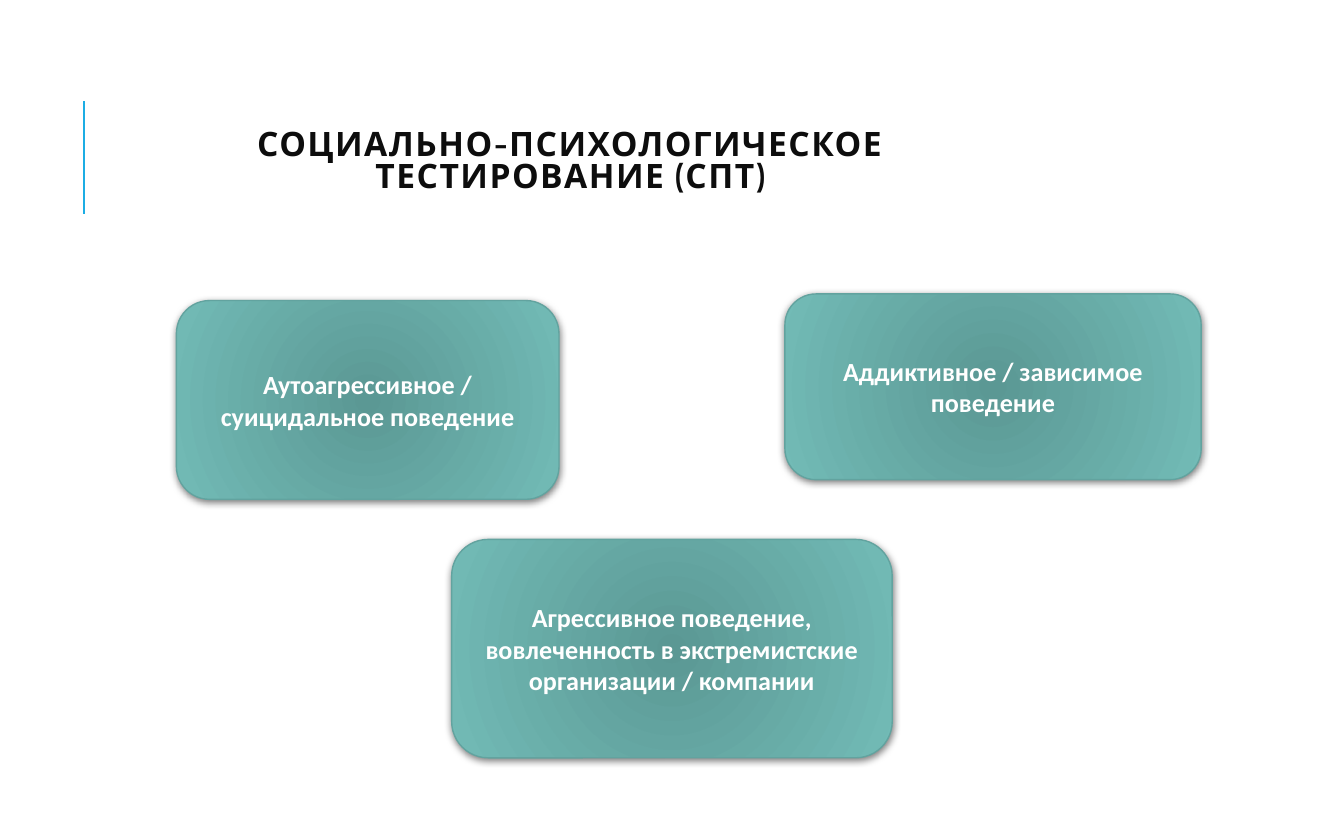
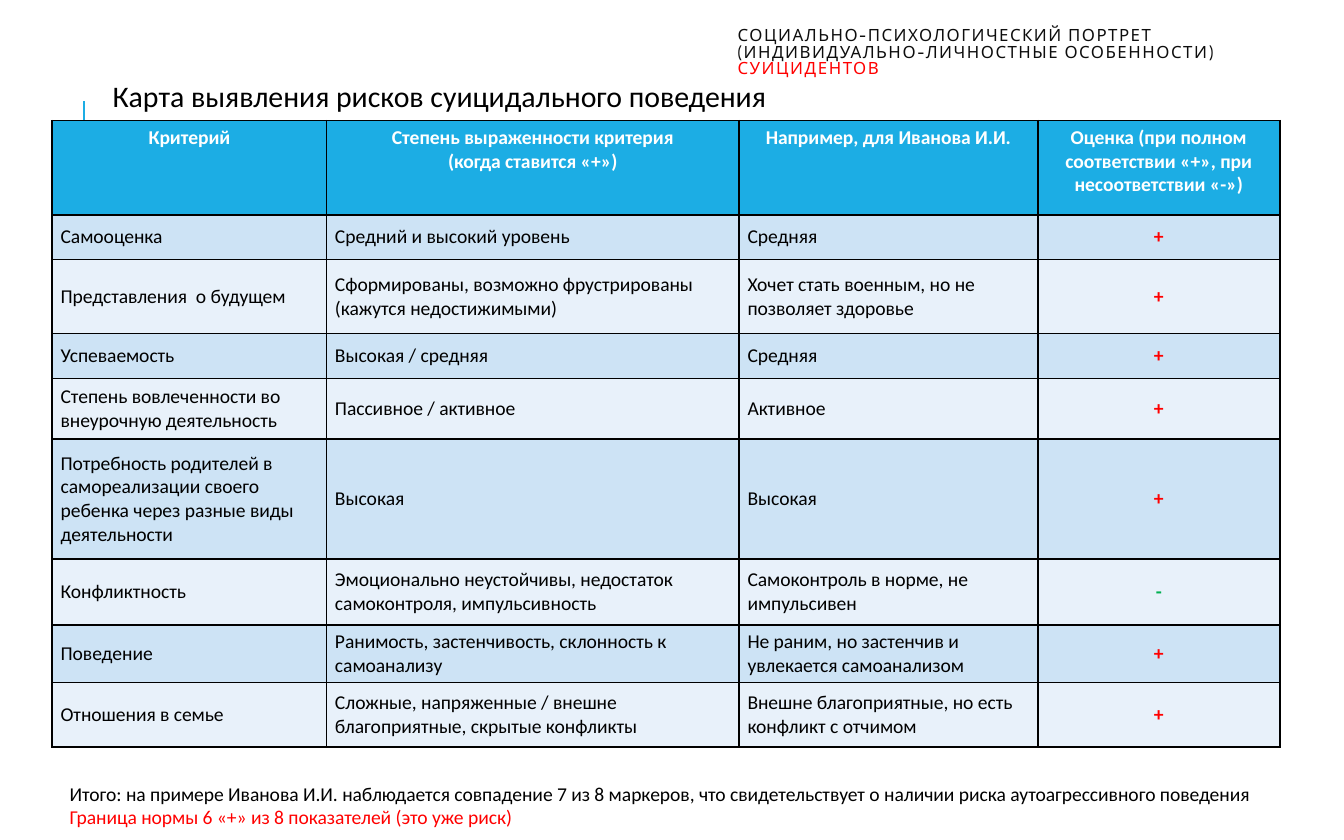
"""Build two slides on social and psychological testing and a risk chart."""
from dataclasses import dataclass

from lxml.etree import SubElement
from pptx import Presentation
from pptx.dml.color import RGBColor
from pptx.enum.shapes import MSO_CONNECTOR, MSO_SHAPE
from pptx.enum.text import MSO_ANCHOR, MSO_AUTO_SIZE, PP_ALIGN
from pptx.oxml.ns import qn
from pptx.util import Pt


@dataclass(frozen=True)
class Theme:
    heading_font: str = "Cabin"
    body_font: str = "Calibri"
    accent: str = "1CADE4"
    heading: str = "0D0D0D"
    text: str = "000000"
    light: str = "FFFFFF"
    alert: str = "FF0000"
    calm: str = "00B050"
    card_centre: str = "5B9894"
    card_edge: str = "72BBB6"
    card_line: str = "62A39F"
    bands: tuple = ("CDE3F5", "E8F1FA")
    title_size: float = 18
    small_title_size: float = 9
    caption_size: float = 16
    card_size: float = 14
    table_size: float = 10.5


class SlideBuilder:
    def __init__(self, presentation, theme):
        self.presentation = presentation
        self.theme = theme
        self.slide = None

    def new_slide(self):
        self.slide = self.presentation.slides.add_slide(self.presentation.slide_layouts[5])
        rule = self.slide.shapes.add_connector(
            MSO_CONNECTOR.STRAIGHT, Pt(45), Pt(114.5), Pt(45), Pt(54))
        rule.line.color.rgb = RGBColor.from_string(self.theme.accent)
        rule.line.width = Pt(1.5)
        SubElement(rule._element.spPr, qn("a:effectLst"))

    def add_text(self, paragraph, text, size, color, bold=False, font=None):
        run = paragraph.add_run()
        run.text = text
        run.font.name = font or self.theme.body_font
        run.font.size = Pt(size)
        run.font.bold = bold
        run.font.color.rgb = RGBColor.from_string(color)
        return run

    def title(self, box, runs, size, alignment=PP_ALIGN.LEFT, bold=False):
        shape = self.slide.shapes.title
        shape.left, shape.top, shape.width, shape.height = map(Pt, box)
        frame = shape.text_frame
        frame.auto_size = MSO_AUTO_SIZE.NONE
        frame.vertical_anchor = MSO_ANCHOR.MIDDLE
        paragraph = frame.paragraphs[0]
        paragraph.alignment = alignment
        paragraph.line_spacing = 0.8
        for text, color in runs:
            for number, line in enumerate(text.split("\n")):
                if number:
                    paragraph.add_line_break()
                run = self.add_text(paragraph, line, size, color, bold, self.theme.heading_font)
                run.font._element.set("spc", "80")

    def card(self, box, text):
        theme = self.theme
        shape = self.slide.shapes.add_shape(MSO_SHAPE.ROUNDED_RECTANGLE, *map(Pt, box))
        shape.line.color.rgb = RGBColor.from_string(theme.card_line)
        shape.line.width = Pt(0.75)
        shape.fill.gradient()
        for stop, color in zip(shape.fill.gradient_stops, (theme.card_centre, theme.card_edge)):
            stop.color.rgb = RGBColor.from_string(color)
        gradient = shape._element.spPr.find(qn("a:gradFill"))
        gradient.remove(gradient.find(qn("a:lin")))
        radial = SubElement(gradient, qn("a:path"), {"path": "circle"})
        SubElement(radial, qn("a:fillToRect"), dict.fromkeys("ltrb", "100000"))
        self.add_shadow(shape)
        frame = shape.text_frame
        frame.word_wrap = True
        frame.vertical_anchor = MSO_ANCHOR.MIDDLE
        paragraph = frame.paragraphs[0]
        paragraph.alignment = PP_ALIGN.CENTER
        self.add_text(paragraph, text, theme.card_size, theme.light, bold=True)

    def add_shadow(self, shape):
        shape.shadow.inherit = False
        effects = shape._element.spPr.find(qn("a:effectLst"))
        shadow = SubElement(effects, qn("a:outerShdw"), {
            "blurRad": str(Pt(4)), "dist": str(Pt(1)), "dir": "5400000", "rotWithShape": "0"})
        color = SubElement(shadow, qn("a:srgbClr"), {"val": self.theme.text})
        SubElement(color, qn("a:alpha"), {"val": "50000"})

    def text_box(self, box, lines, size, wrap=True, top_margin=3.6):
        shape = self.slide.shapes.add_textbox(*map(Pt, box))
        frame = shape.text_frame
        frame.word_wrap = wrap
        frame.auto_size = MSO_AUTO_SIZE.SHAPE_TO_FIT_TEXT
        frame.margin_top = Pt(top_margin)
        for number, (text, color) in enumerate(lines):
            paragraph = frame.add_paragraph() if number else frame.paragraphs[0]
            self.add_text(paragraph, text, size, color)

    def table(self, left, top, widths, heights, rows):
        theme = self.theme
        table = self.slide.shapes.add_table(
            len(rows), len(widths), Pt(left), Pt(top), Pt(sum(widths)), Pt(sum(heights))).table
        table.horz_banding = False
        for column, width in zip(table.columns, widths):
            column.width = Pt(width)
        for number, (row, height, texts) in enumerate(zip(table.rows, heights, rows)):
            row.height = Pt(height)
            for column, (cell, text) in enumerate(zip(row.cells, texts)):
                header, mark = number == 0, column == len(widths) - 1
                fill = theme.accent if header else theme.bands[(number - 1) % 2]
                color = theme.light if header else theme.text
                if mark and not header:
                    color = theme.alert if text == "+" else theme.calm
                self.cell(cell, text, fill, color, header or mark,
                          MSO_ANCHOR.TOP if header else MSO_ANCHOR.MIDDLE)

    def cell(self, cell, text, fill, color, strong, anchor):
        cell.margin_left = cell.margin_right = Pt(4.5)
        cell.margin_top = cell.margin_bottom = Pt(2.8)
        cell.vertical_anchor = anchor
        for side in ("lnL", "lnR", "lnT", "lnB"):
            border = SubElement(cell._tc.get_or_add_tcPr(), qn(f"a:{side}"), {"w": str(Pt(1))})
            solid = SubElement(border, qn("a:solidFill"))
            SubElement(solid, qn("a:srgbClr"), {"val": self.theme.text})
        cell.fill.solid()
        cell.fill.fore_color.rgb = RGBColor.from_string(fill)
        frame = cell.text_frame
        for number, line in enumerate(text.split("\n")):
            paragraph = frame.add_paragraph() if number else frame.paragraphs[0]
            paragraph.alignment = PP_ALIGN.CENTER if strong else PP_ALIGN.LEFT
            self.add_text(paragraph, line, self.theme.table_size, color, strong)


CARDS = [
    ((94.5, 161, 205, 106.5), "Аутоагрессивное / суицидальное поведение"),
    ((420.5, 157.5, 223, 99.5), "Аддиктивное / зависимое поведение"),
    ((242, 289, 236, 117),
     "Агрессивное поведение, вовлеченность в экстремистские организации / компании"),
]

RISK_ROWS = [
    ("Критерий", "Степень выраженности критерия\n(когда ставится «+»)",
     "Например, для Иванова И.И.",
     "Оценка (при полном соответствии «+», при несоответствии «-»)"),
    ("Самооценка", "Средний и высокий уровень", "Средняя", "+"),
    ("Представления  о будущем", "Сформированы, возможно фрустрированы (кажутся недостижимыми)",
     "Хочет стать военным, но не позволяет здоровье", "+"),
    ("Успеваемость", "Высокая / средняя", "Средняя", "+"),
    ("Степень вовлеченности во внеурочную деятельность", "Пассивное / активное",
     "Активное", "+"),
    ("Потребность родителей в самореализации своего ребенка через разные виды деятельности",
     "Высокая", "Высокая", "+"),
    ("Конфликтность", "Эмоционально неустойчивы, недостаток самоконтроля, импульсивность",
     "Самоконтроль в норме, не импульсивен", "-"),
    ("Поведение", "Ранимость, застенчивость, склонность к самоанализу",
     "Не раним, но застенчив и увлекается самоанализом", "+"),
    ("Отношения в семье", "Сложные, напряженные / внешне благоприятные, скрытые конфликты",
     "Внешне благоприятные, но есть конфликт с отчимом", "+"),
]
COLUMN_WIDTHS = (147, 221, 160, 129.6)
ROW_HEIGHTS = (50.5, 24, 39.7, 24, 32.6, 64, 35.4, 24.5, 34.6)


def main():
    theme = Theme()
    presentation = Presentation()
    presentation.slide_width, presentation.slide_height = Pt(720), Pt(450)
    builder = SlideBuilder(presentation, theme)

    builder.new_slide()
    builder.title((62.6, 58, 486, 58.5),
                  [("СОЦИАЛЬНО-ПСИХОЛОГИЧЕСКОЕ ТЕСТИРОВАНИЕ (СПТ)", theme.heading)],
                  theme.title_size, PP_ALIGN.CENTER, bold=True)
    for box, text in CARDS:
        builder.card(box, text)

    builder.new_slide()
    builder.title((388, -0.7, 314.6, 58.5), [
        ("СОЦИАЛЬНО-ПСИХОЛОГИЧЕСКИЙ ПОРТРЕТ\n(ИНДИВИДУАЛЬНО-ЛИЧНОСТНЫЕ ОСОБЕННОСТИ) ",
         theme.heading),
        ("СУИЦИДЕНТОВ", theme.alert)], theme.small_title_size)
    builder.table(28, 64.6, COLUMN_WIDTHS, ROW_HEIGHTS, RISK_ROWS)
    builder.text_box((30.2, 402.5, 666, 45.4), [
        ("Итого: на примере Иванова И.И. наблюдается совпадение 7 из 8 маркеров, "
         "что свидетельствует о наличии риска аутоагрессивного поведения", theme.text),
        ("Граница нормы 6 «+» из 8 показателей (это уже риск)", theme.alert)],
        theme.table_size, top_margin=16.4)
    builder.text_box((53.3, 38.2, 368.6, 26.6),
                     [("Карта выявления рисков суицидального поведения", theme.text)],
                     theme.caption_size, wrap=False)
    presentation.save("out.pptx")


if __name__ == "__main__":
    main()
